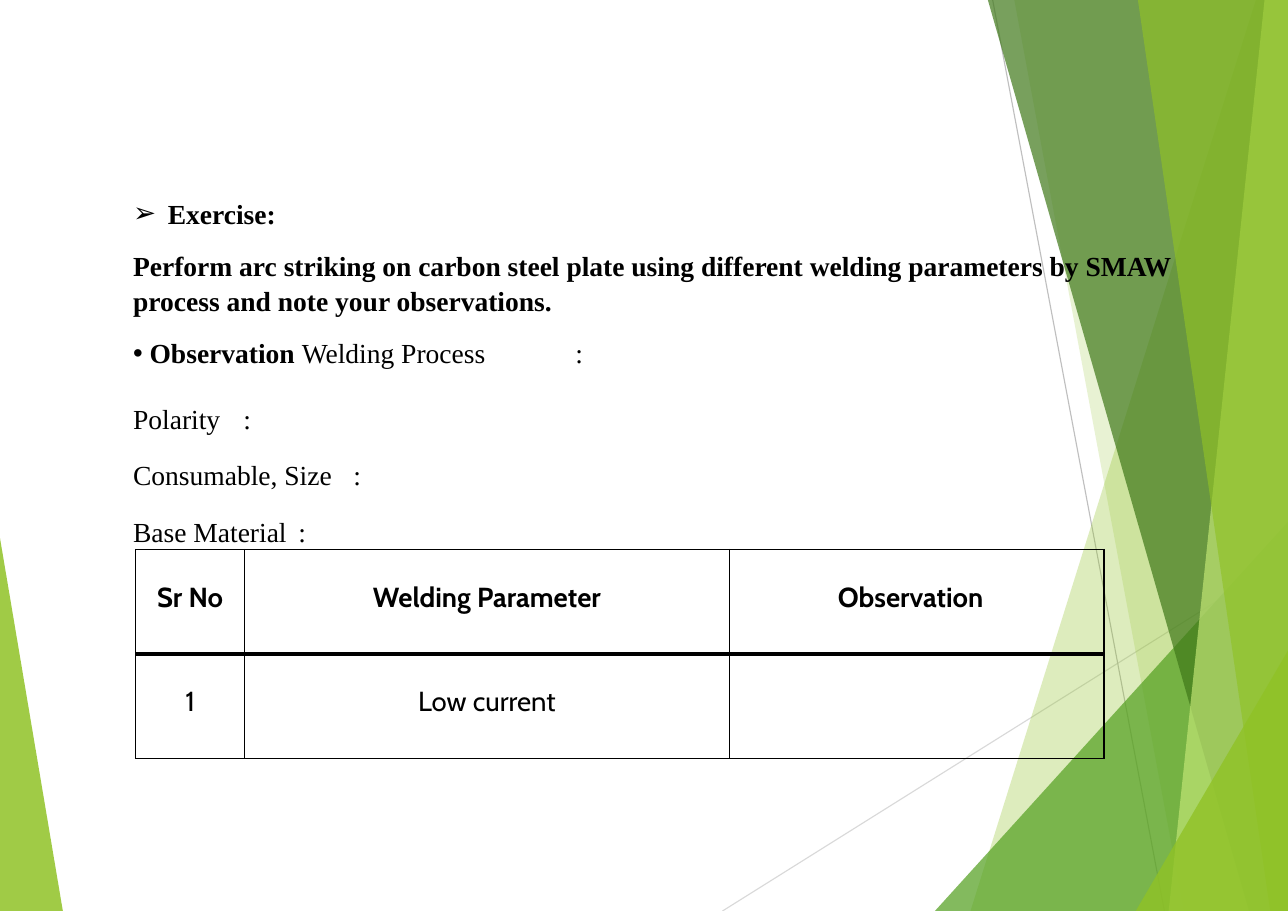
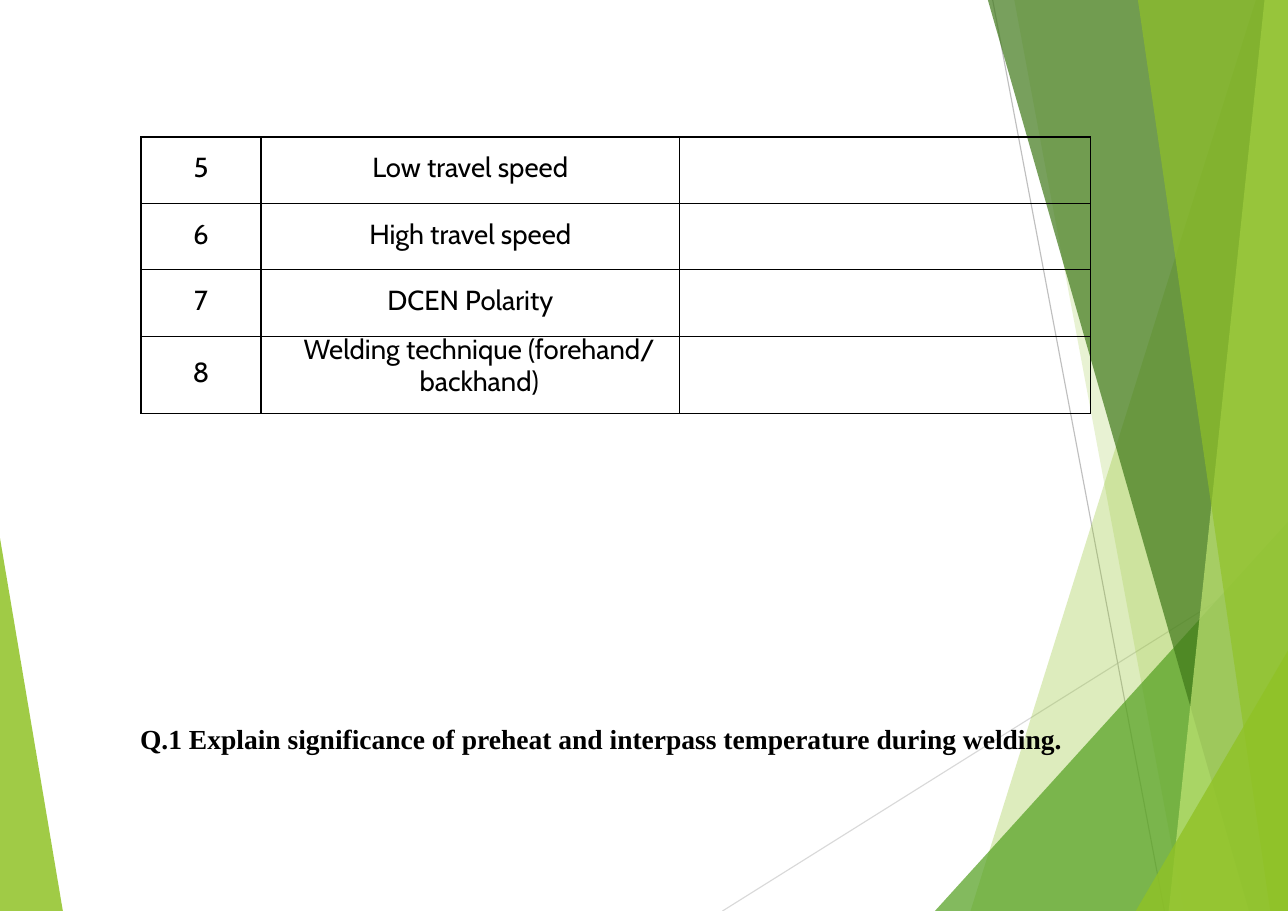
from lxml import etree
from pptx import Presentation
from pptx import util as u
from pptx.dml.color import RGBColor
from pptx.enum import shapes, text
from pptx.oxml.ns import qn

W, H = 29.7, 21
SERIF, SANS = "Times New Roman", "Cabin"
BLACK, LIME, GREEN, DARK, PALE = "000000", "90C226", "54A021", "3F7819", "C0E474"
RIGHT_EDGE = [(W, H), (W, 0)]
RAYS = [((16.66, H), (W, 12.83), "D9D9D9"), ((22.89, 0), (26.85, H), "BFBFBF")]
FACETS = [
    ([(0, 12.4), (1.45, H), (0, H)], LIME, 85),
    ([(28.96, 0), (22.38, H)] + RIGHT_EDGE, LIME, 30),
    ([(23.39, 0), (27.3, H)] + RIGHT_EDGE, LIME, 20),
    ([(21.56, H), (W, 12.03), (W, H)], GREEN, 72),
    ([(22.78, 0), (28.8, H)] + RIGHT_EDGE, DARK, 70),
    ([(29.16, 0), (26.95, H)] + RIGHT_EDGE, PALE, 70),
    ([(26.24, 0), (29.29, H)] + RIGHT_EDGE, LIME, 65),
    ([(26.19, H), (W, 15), (W, H)], LIME, 80),
]


def rgb(color):
    return RGBColor.from_string(color)


def cm(values):
    return [u.Cm(v) for v in values]


def child(parent, tag, **attrs):
    return etree.SubElement(parent, qn(tag), {k: str(v) for k, v in attrs.items()})


def add_facet(s, points, color, opacity):
    first, *rest = [cm(pt) for pt in points]
    builder = s.shapes.build_freeform(*first, scale=1.0)
    builder.add_line_segments(rest, close=True)
    sp = builder.convert_to_shape()
    sp.shadow.inherit = False
    sp.fill.solid()
    sp.fill.fore_color.rgb = rgb(color)
    sp.line.fill.background()
    child(sp.element.find(".//" + qn("a:srgbClr")), "a:alpha", val=opacity * 1000)
    return sp


def add_ray(s, start, end, color):
    sp = s.shapes.add_connector(shapes.MSO_CONNECTOR.STRAIGHT, *cm(start + end))
    sp.line.color.rgb = rgb(color)
    sp.line.width = u.Pt(0.75)
    child(sp.element.spPr, "a:effectLst")
    return sp


def decorate_layout(layout, s):
    left, *right = FACETS
    art = [add_facet(s, *left)]
    art += [add_ray(s, *ray) for ray in RAYS]
    art += [add_facet(s, *facet) for facet in right]
    for i, sp in enumerate(art, 2):
        layout.shapes.element.insert(i, sp.element)


def add_run(p, content, font, bold):
    r = p.add_run()
    r.text = content
    r.font.name = font
    r.font.size = u.Pt(18)
    r.font.bold = bold
    r.font.color.rgb = rgb(BLACK)


def add_line(p, runs, bullet=None, hang=0, tab=None, before=0, spacing=1.0):
    pPr = p._p.get_or_add_pPr()
    pPr.set("marL", str(u.Cm(hang)))
    pPr.set("indent", str(-u.Cm(hang)))
    if bullet:
        child(pPr, "a:buChar", char=bullet)
    else:
        child(pPr, "a:buNone")
    if tab:
        child(child(pPr, "a:tabLst"), "a:tab", pos=u.Cm(tab), algn="l")
    p.space_before = u.Pt(before)
    p.line_spacing = spacing
    for content, bold in runs:
        add_run(p, content, SERIF, bold)


def fill_body(s, box, lines):
    title = s.shapes.title.element
    title.getparent().remove(title)
    sp = s.placeholders[1]
    sp.left, sp.top, sp.width, sp.height = cm(box)
    tf = sp.text_frame
    tf.word_wrap = True
    tf.auto_size = text.MSO_AUTO_SIZE.NONE
    tf.vertical_anchor = text.MSO_ANCHOR.TOP
    tf.margin_left = tf.margin_top = tf.margin_right = tf.margin_bottom = 0
    for i, line in enumerate(lines):
        add_line(tf.add_paragraph() if i else tf.paragraphs[0], **line)


def set_borders(cell, widths):
    tcPr = cell._tc.get_or_add_tcPr()
    for side in "LRTB":
        ln = child(tcPr, "a:ln" + side, w=u.Pt(widths.get(side, 1)))
        child(child(ln, "a:solidFill"), "a:srgbClr", val=BLACK)


def add_grid(s, corner, cols, rows, cells, heavy_rule=None):
    size = cm((sum(cols), sum(rows)))
    table = s.shapes.add_table(len(rows), len(cols), *cm(corner), *size).table
    table.first_row = table.horz_banding = False
    for col, width in zip(table.columns, cols):
        col.width = u.Cm(width)
    for i, (row, height) in enumerate(zip(table.rows, rows)):
        row.height = u.Cm(height)
        for cell, content in zip(row.cells, cells[i]):
            widths = {}
            if heavy_rule is not None:
                widths = {"B": 3} if i == heavy_rule else {"T": 3}
            set_borders(cell, widths)
            cell.fill.background()
            fill_cell(cell, content, bold=i == heavy_rule)
    return table


def fill_cell(cell, content, bold):
    cell.margin_left = cell.margin_top = cell.margin_right = 0
    cell.margin_bottom = u.Cm(0.1)
    cell.vertical_anchor = text.MSO_ANCHOR.MIDDLE
    tf = cell.text_frame
    for i, line in enumerate(content.split("\n") if content else []):
        p = tf.add_paragraph() if i else tf.paragraphs[0]
        p.alignment = text.PP_ALIGN.CENTER
        add_run(p, line, SANS, bold)


def build_exercise(s):
    task = ("Perform arc striking on carbon steel plate using different welding "
            "parameters by SMAW process and note your observations.")
    lines = [
        dict(runs=[("Exercise:", True)], bullet="➢", hang=0.8, tab=0.8),
        dict(runs=[(task, True)], before=11.3, spacing=1.06),
        dict(runs=[("Observation ", True), ("Welding Process\t:", False)],
             bullet="•", hang=0.38, tab=10.2, before=12.5),
    ]
    fields = [("Polarity", 3.84), ("Consumable, Size", 5.13), ("Base Material", 3.84)]
    for i, (field, tab) in enumerate(fields):
        lines.append(dict(runs=[(field + "\t:", False)], tab=tab,
                          before=0 if i else 6, spacing=1.71))
    fill_body(s, (3.07, 4.53, 24.1, 8), lines)
    table = add_grid(s, (3.13, 12.67), (2.51, 11.18, 8.64), (2.41, 2.41),
                     [("Sr No", "Welding Parameter", "Observation"),
                      ("1", "Low current", "")], heavy_rule=0)
    for cell in table.iter_cells():
        cell.margin_bottom = u.Cm(0.2)
    table.cell(0, 2).margin_right = u.Cm(0.28)


def build_question(s):
    question = "Q.1 Explain significance of preheat and interpass temperature during welding."
    table = add_grid(s, (3.25, 3.16), (2.77, 9.65, 9.47), (1.53, 1.53, 1.53, 1.78),
                     [("5", "Low travel speed", ""),
                      ("6", "High travel speed", ""),
                      ("7", "DCEN Polarity", ""),
                      ("8", "Welding technique (forehand/\nbackhand)", "")])
    technique = table.cell(3, 1)
    technique.vertical_anchor = text.MSO_ANCHOR.TOP
    technique.margin_left = u.Cm(0.41)
    for p, spacing in zip(technique.text_frame.paragraphs, (19.6, 21.2)):
        p.line_spacing = u.Pt(spacing)
    fill_body(s, (3.23, 16.64, 21.4, 0.85), [dict(runs=[(question, True)])])


def main():
    prs = Presentation()
    prs.slide_width, prs.slide_height = cm((W, H))
    layout = prs.slide_layouts[1]
    exercise, question = [prs.slides.add_slide(layout) for _ in range(2)]
    decorate_layout(layout, exercise)
    build_exercise(exercise)
    build_question(question)
    prs.save("out.pptx")


if __name__ == "__main__":
    main()
